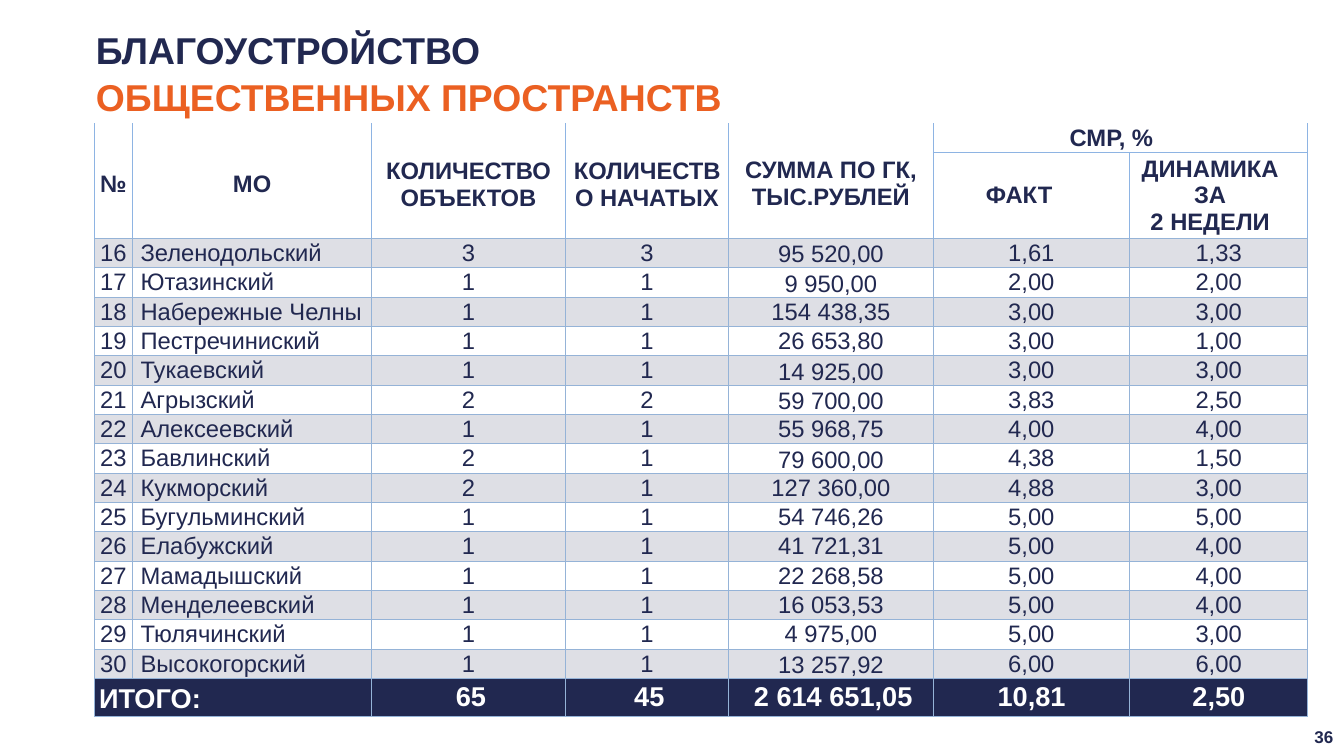
import pptx
import pptx.util
import pptx.dml.color
import pptx.enum.shapes
import pptx.enum.text
import lxml.etree

Inches = pptx.util.Inches
RGBColor = pptx.dml.color.RGBColor
ALIGN = pptx.enum.text.PP_ALIGN
ANCHOR = pptx.enum.text.MSO_ANCHOR

NAVY = RGBColor(0x21, 0x28, 0x50)
ORANGE = RGBColor(0xEB, 0x60, 0x22)
WHITE = RGBColor(0xFF, 0xFF, 0xFF)
STRIPE = RGBColor(0xDE, 0xDF, 0xE5)
GRID = RGBColor(0x95, 0xB3, 0xD7)
HEADER_GRID = RGBColor(0x8E, 0xB4, 0xE3)

COLUMN_WIDTHS = [0.63, 3.91, 3.17, 2.67, 3.35, 3.21, 2.92]
ROW_HEIGHTS = [0.48, 1.37] + [0.48] * 15 + [0.6]
HEADERS = [
    (0, 0, "№", 0.12, 0),
    (0, 1, "МО", 0.12, 0),
    (0, 2, "КОЛИЧЕСТВО ОБЪЕКТОВ", 0.12, 0),
    (0, 3, "КОЛИЧЕСТВО НАЧАТЫХ", 0.12, 0),
    (0, 4, "СУММА ПО ГК,\nТЫС.РУБЛЕЙ", 0.1, 0),
    (0, 5, "СМР, %", 0, 0.3),
    (1, 5, "ФАКТ", 0, 0.4),
    (1, 6, "ДИНАМИКА ЗА\n2 НЕДЕЛИ", 0, 0.28),
]
DISTRICTS = [
    ("16", "Зеленодольский", "3", "3", "95 520,00", "1,61", "1,33"),
    ("17", "Ютазинский", "1", "1", "9 950,00", "2,00", "2,00"),
    ("18", "Набережные Челны", "1", "1", "154 438,35", "3,00", "3,00"),
    ("19", "Пестречиниский", "1", "1", "26 653,80", "3,00", "1,00"),
    ("20", "Тукаевский", "1", "1", "14 925,00", "3,00", "3,00"),
    ("21", "Агрызский", "2", "2", "59 700,00", "3,83", "2,50"),
    ("22", "Алексеевский", "1", "1", "55 968,75", "4,00", "4,00"),
    ("23", "Бавлинский", "2", "1", "79 600,00", "4,38", "1,50"),
    ("24", "Кукморский", "2", "1", "127 360,00", "4,88", "3,00"),
    ("25", "Бугульминский", "1", "1", "54 746,26", "5,00", "5,00"),
    ("26", "Елабужский", "1", "1", "41 721,31", "5,00", "4,00"),
    ("27", "Мамадышский", "1", "1", "22 268,58", "5,00", "4,00"),
    ("28", "Менделеевский", "1", "1", "16 053,53", "5,00", "4,00"),
    ("29", "Тюлячинский", "1", "1", "4 975,00", "5,00", "3,00"),
    ("30", "Высокогорский", "1", "1", "13 257,92", "6,00", "6,00"),
]
BOTTOM_AMOUNTS = {"16", "17", "20", "21", "23", "30"}
TOTALS = [(0, "ИТОГО:"), (2, "65"), (3, "45"), (4, "2 614 651,05"), (5, "10,81"), (6, "2,50")]


def format_text(frame, size, color, bold, align):
    for paragraph in frame.paragraphs:
        paragraph.alignment = align
        for run in paragraph.runs:
            run.font.name = "Arial"
            run.font.size = pptx.util.Pt(size)
            run.font.bold = bold
            run.font.color.rgb = color


def fill_cell(cell, text, margins, fill, size=28, color=NAVY, bold=False, align=ALIGN.CENTER):
    cell.text_frame.text = text
    format_text(cell.text_frame, size, color, bold, align)
    cell.vertical_anchor = ANCHOR.MIDDLE
    left, top, right = margins
    cell.margin_left, cell.margin_top = Inches(left), Inches(top)
    cell.margin_right, cell.margin_bottom = Inches(right), 0
    cell.fill.solid()
    cell.fill.fore_color.rgb = fill


deck = pptx.Presentation()
deck.slide_width, deck.slide_height = Inches(21.99), Inches(12.37)
slide = deck.slides.add_slide(deck.slide_layouts[6])

page_number = slide.shapes.add_shape(
    pptx.enum.shapes.MSO_SHAPE.ROUNDED_RECTANGLE,
    Inches(21.3), Inches(11.76), Inches(0.72), Inches(0.59))
page_number.shadow.inherit = False
page_number.fill.background()
page_number.line.fill.background()
page_number.text_frame.text = "36"
page_number.text_frame.vertical_anchor = ANCHOR.MIDDLE
format_text(page_number.text_frame, 20, NAVY, True, ALIGN.CENTER)

title = slide.shapes.add_textbox(Inches(1.57), Inches(0.39), Inches(19.42), Inches(1.5)).text_frame
title.word_wrap = True
title.margin_left = title.margin_right = title.margin_bottom = 0
title.margin_top = Inches(0.02)
title.text = "БЛАГОУСТРОЙСТВО\vОБЩЕСТВЕННЫХ ПРОСТРАНСТВ"
title.paragraphs[0].line_spacing = 1.05
format_text(title, 44, NAVY, True, ALIGN.LEFT)
title.paragraphs[0].runs[1].font.color.rgb = ORANGE

progress = slide.shapes.add_table(
    len(ROW_HEIGHTS), len(COLUMN_WIDTHS), Inches(1.54), Inches(2.02),
    Inches(sum(COLUMN_WIDTHS)), Inches(sum(ROW_HEIGHTS))).table
progress.first_row = progress.horz_banding = False
for column, width in zip(progress.columns, COLUMN_WIDTHS):
    column.width = Inches(width)
for row, height in zip(progress.rows, ROW_HEIGHTS):
    row.height = Inches(height)

for r in range(len(ROW_HEIGHTS)):
    for c in range(len(COLUMN_WIDTHS)):
        properties = progress.cell(r, c)._tc.get_or_add_tcPr()
        for side in "LRTB":
            if r == 0 and side == "T":
                continue
            header_side = r < 2 and (side != "B" or (r == 0 and c >= 5))
            edge = lxml.etree.SubElement(properties, pptx.oxml.ns.qn("a:ln" + side), w="12700")
            paint = lxml.etree.SubElement(edge, pptx.oxml.ns.qn("a:solidFill"))
            lxml.etree.SubElement(paint, pptx.oxml.ns.qn("a:srgbClr"),
                                  val=str(HEADER_GRID if header_side else GRID))

for c in range(5):
    progress.cell(0, c).merge(progress.cell(1, c))
progress.cell(0, 5).merge(progress.cell(0, 6))
progress.cell(17, 0).merge(progress.cell(17, 1))

for r, c, label, top, right in HEADERS:
    fill_cell(progress.cell(r, c), label, (0, top, right), WHITE, bold=True)

for r, district in enumerate(DISTRICTS, 2):
    for c, value in enumerate(district):
        fill_cell(progress.cell(r, c), value, (0.13 if c == 1 else 0.01, 0.01, 0.01),
                  WHITE if r % 2 else STRIPE, align=ALIGN.LEFT if c == 1 else ALIGN.CENTER)
    if district[0] in BOTTOM_AMOUNTS:
        progress.cell(r, 4).vertical_anchor = ANCHOR.BOTTOM

for c, value in TOTALS:
    fill_cell(progress.cell(17, c), value, (0.08 if c < 5 else 0.01, 0, 0), NAVY, 32, WHITE, True,
              ALIGN.CENTER if c else ALIGN.LEFT)
progress.cell(17, 0).text_frame.paragraphs[0].line_spacing = 1.15

deck.save("out.pptx")
